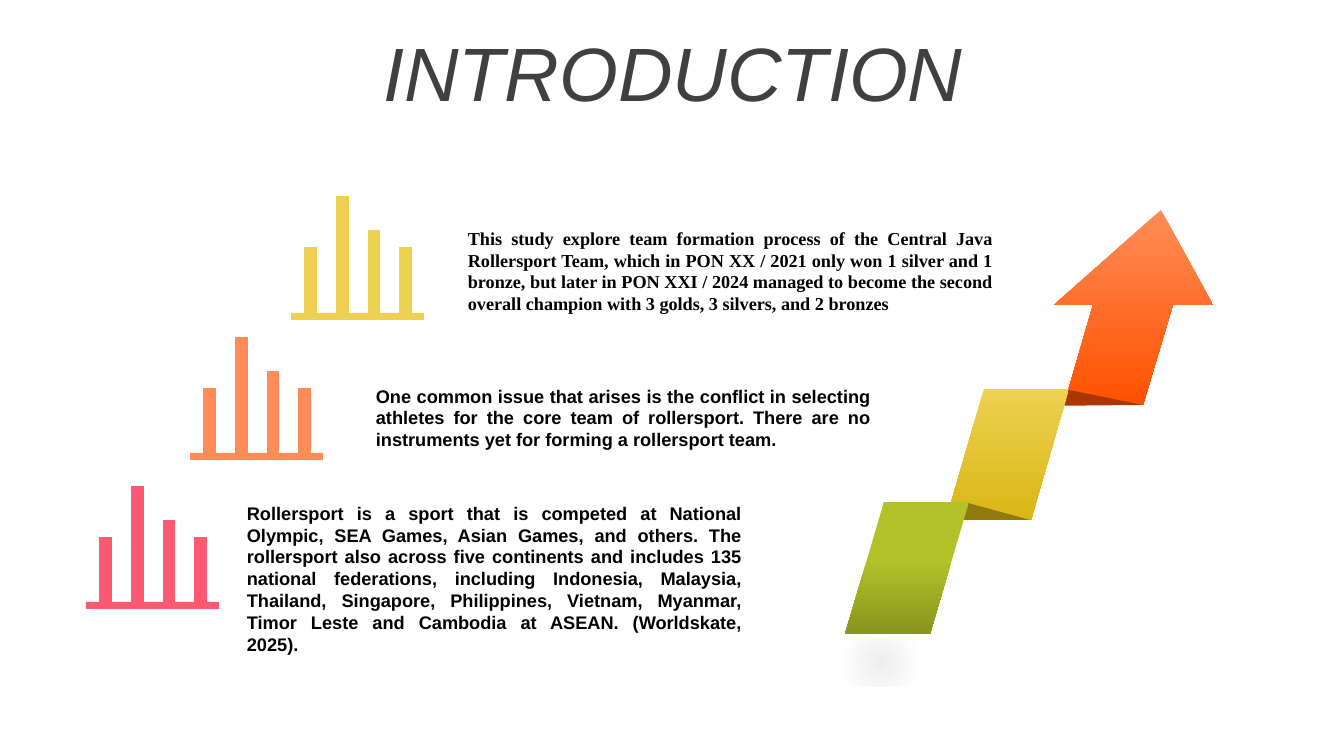
from typing import NamedTuple

from lxml import etree
from pptx import Presentation, util as u
from pptx.chart.data import CategoryChartData
from pptx.dml.color import RGBColor
from pptx.enum import chart as ch, shapes, text
from pptx.oxml import parse_xml
from pptx.oxml.ns import nsdecls, qn

EMU_PER_PX = 914400 / 100.8

BLACK = RGBColor(0x00, 0x00, 0x00)
TITLE_GREY = RGBColor(0x40, 0x40, 0x40)
PINK = RGBColor(0xFF, 0x59, 0x71)
ORANGE = RGBColor(0xFF, 0x8C, 0x56)
DEEP_ORANGE = RGBColor(0xFF, 0x52, 0x01)
RUST = RGBColor(0xAB, 0x36, 0x00)
YELLOW = RGBColor(0xEE, 0xD1, 0x51)
GOLD = RGBColor(0xDA, 0xB6, 0x15)
BRONZE = RGBColor(0x91, 0x79, 0x0E)
GREEN = RGBColor(0xB1, 0xC1, 0x27)
OLIVE = RGBColor(0x89, 0x96, 0x1E)

CHART_W, CHART_H, BASE_H = 133, 144, 7
BAR_VALUES = (57, 100, 71, 57)


class Box(NamedTuple):
    x: int
    y: int
    w: int
    h: int


class Point(NamedTuple):
    body: str
    box: Box
    font: str
    color: RGBColor
    chart_x: int
    chart_y: int
    base_y: int


class Facet(NamedTuple):
    """One face of the folded arrow; two colours run from top to bottom."""
    outline: tuple[tuple[int, int], ...]
    colors: tuple[RGBColor, ...]
    start: float = 0.0


POINTS = (
    Point("This study explore team formation process of the Central Java Rollersport Team, "
          "which in PON XX / 2021 only won 1 silver and 1 bronze, but later in PON XXI / 2024 "
          "managed to become the second overall champion with 3 golds, 3 silvers, and 2 bronzes",
          Box(458, 222, 544, 99), "Times New Roman", YELLOW, 291, 175, 313),
    Point("One common issue that arises is the conflict in selecting athletes for the core team "
          "of rollersport. There are no instruments yet for forming a rollersport team.",
          Box(366, 380, 514, 77), "Arial", ORANGE, 190, 316, 453),
    Point("Rollersport is a sport that is competed at National Olympic, SEA Games, Asian Games, "
          "and others. The rollersport also across five continents and includes 135 national "
          "federations, including Indonesia, Malaysia, Thailand, Singapore, Philippines, "
          "Vietnam, Myanmar, Timor Leste and Cambodia at ASEAN. (Worldskate, 2025).",
          Box(237, 497, 514, 164), "Arial", PINK, 86, 465, 602),
)

FACETS = (
    Facet(((1161, 210), (1213, 305), (1173, 305), (1143, 405), (1064, 405), (1093, 305),
           (1054, 305)), (ORANGE, DEEP_ORANGE)),
    Facet(((1143, 405), (1069, 390), (986, 390), (1037, 406)), (RUST,)),
    Facet(((984, 389), (1069, 389), (1031, 520), (946, 520)), (YELLOW, GOLD)),
    Facet(((1030, 520), (968, 503), (883, 503), (929, 520)), (BRONZE,)),
    Facet(((884, 502), (969, 502), (930, 634), (845, 634)), (GREEN, OLIVE), 0.44),
)


def px(n: float) -> u.Emu:
    return u.Emu(round(n * EMU_PER_PX))


def place(box: Box) -> list[u.Emu]:
    return [px(n) for n in box]


def add_text(s, box: Box, body: str, font: str, size: int, color: RGBColor, align):
    sp = s.shapes.add_textbox(*place(box))
    tf = sp.text_frame
    tf.word_wrap = True
    tf.text = body
    p = tf.paragraphs[0]
    p.alignment = align
    f = p.runs[0].font
    f.name, f.size, f.color.rgb = font, u.Pt(size), color
    return tf


def add_title(s) -> None:
    tf = add_text(s, Box(35, 37, 1276, 80), "INTRODUCTION", "Arial", 54, TITLE_GREY,
                  text.PP_ALIGN.CENTER)
    tf.vertical_anchor = text.MSO_ANCHOR.MIDDLE
    p = tf.paragraphs[0]
    p.line_spacing = 0.9
    p.runs[0].font.italic = True


def add_ground_shadow(s) -> None:
    """Soft grey glow below the arrow, fading out from its centre."""
    sp = s.shapes.add_shape(shapes.MSO_SHAPE.OVAL, *place(Box(730, 640, 301, 47)))
    sp.shadow.inherit = False
    sp.line.fill.background()
    sp.fill.gradient()
    grad = sp.fill._xPr.find(qn("a:gradFill"))
    stops = "".join(
        f'<a:gs pos="{pos}"><a:srgbClr val="808080"><a:alpha val="{alpha}"/></a:srgbClr></a:gs>'
        for pos, alpha in ((0, 14000), (26000, 0), (100000, 0)))
    grad.getparent().replace(grad, parse_xml(
        f'<a:gradFill {nsdecls("a")}><a:gsLst>{stops}</a:gsLst><a:path path="circle">'
        '<a:fillToRect l="50000" t="50000" r="50000" b="50000"/></a:path></a:gradFill>'))


def add_facet(s, facet: Facet) -> None:
    start, *rest = facet.outline
    builder = s.shapes.build_freeform(*start, scale=EMU_PER_PX)
    builder.add_line_segments(rest, close=True)
    sp = builder.convert_to_shape()
    sp.shadow.inherit = False
    sp.line.fill.background()
    if len(facet.colors) == 1:
        sp.fill.solid()
        sp.fill.fore_color.rgb = facet.colors[0]
        return
    sp.fill.gradient()
    sp.fill.gradient_angle = 270
    for stop, color, pos in zip(sp.fill.gradient_stops, facet.colors, (facet.start, 0.99)):
        stop.color.rgb, stop.position = color, pos


def set_plot_area(chart, x: float, y: float, w: float, h: float) -> None:
    plot_area = chart._chartSpace.chart.plotArea
    for old in plot_area.findall(qn("c:layout")):
        plot_area.remove(old)
    layout = etree.Element(qn("c:layout"))
    manual = etree.SubElement(layout, qn("c:manualLayout"))
    for tag, val in (("layoutTarget", "inner"), ("xMode", "edge"), ("yMode", "edge"),
                     ("x", x), ("y", y), ("w", w), ("h", h)):
        etree.SubElement(manual, qn(f"c:{tag}")).set("val", str(val))
    plot_area.insert(0, layout)


def add_bars(s, point: Point) -> None:
    data = CategoryChartData()
    data.categories = [str(n + 1) for n in range(len(BAR_VALUES))]
    data.add_series("Series 1", BAR_VALUES)
    box = Box(point.chart_x, point.chart_y, CHART_W, CHART_H)
    chart = s.shapes.add_chart(ch.XL_CHART_TYPE.COLUMN_STACKED, *place(box), data).chart
    chart.has_legend = chart.has_title = False
    chart.font.name, chart.font.size, chart.font.color.rgb = "Arial", u.Pt(18), BLACK
    axis = chart.value_axis
    axis.minimum_scale, axis.maximum_scale = 0, 114
    axis.has_major_gridlines = False
    axis.visible = chart.category_axis.visible = False
    plot = chart.plots[0]
    plot.vary_by_categories = False
    plot.gap_width, plot.overlap = 150, 100
    fill = plot.series[0].format.fill
    fill.solid()
    fill.fore_color.rgb = point.color
    set_plot_area(chart, 0.03, 0.03, 0.95, 0.94)


def add_baseline(s, point: Point) -> None:
    box = Box(point.chart_x, point.base_y, CHART_W, BASE_H)
    sp = s.shapes.add_shape(shapes.MSO_SHAPE.RECTANGLE, *place(box))
    sp.shadow.inherit = False
    sp.line.fill.background()
    sp.fill.solid()
    sp.fill.fore_color.rgb = point.color


def main() -> None:
    prs = Presentation()
    prs.slide_width, prs.slide_height = px(1344), px(756)
    s = prs.slides.add_slide(prs.slide_layouts[6])
    add_title(s)
    add_ground_shadow(s)
    for facet in FACETS:
        add_facet(s, facet)
    for point in POINTS:
        tf = add_text(s, point.box, point.body, point.font, 13, BLACK, text.PP_ALIGN.JUSTIFY)
        tf.auto_size = text.MSO_AUTO_SIZE.SHAPE_TO_FIT_TEXT
        tf.paragraphs[0].runs[0].font.bold = True
        add_bars(s, point)
        add_baseline(s, point)
    prs.save("out.pptx")


if __name__ == "__main__":
    main()
